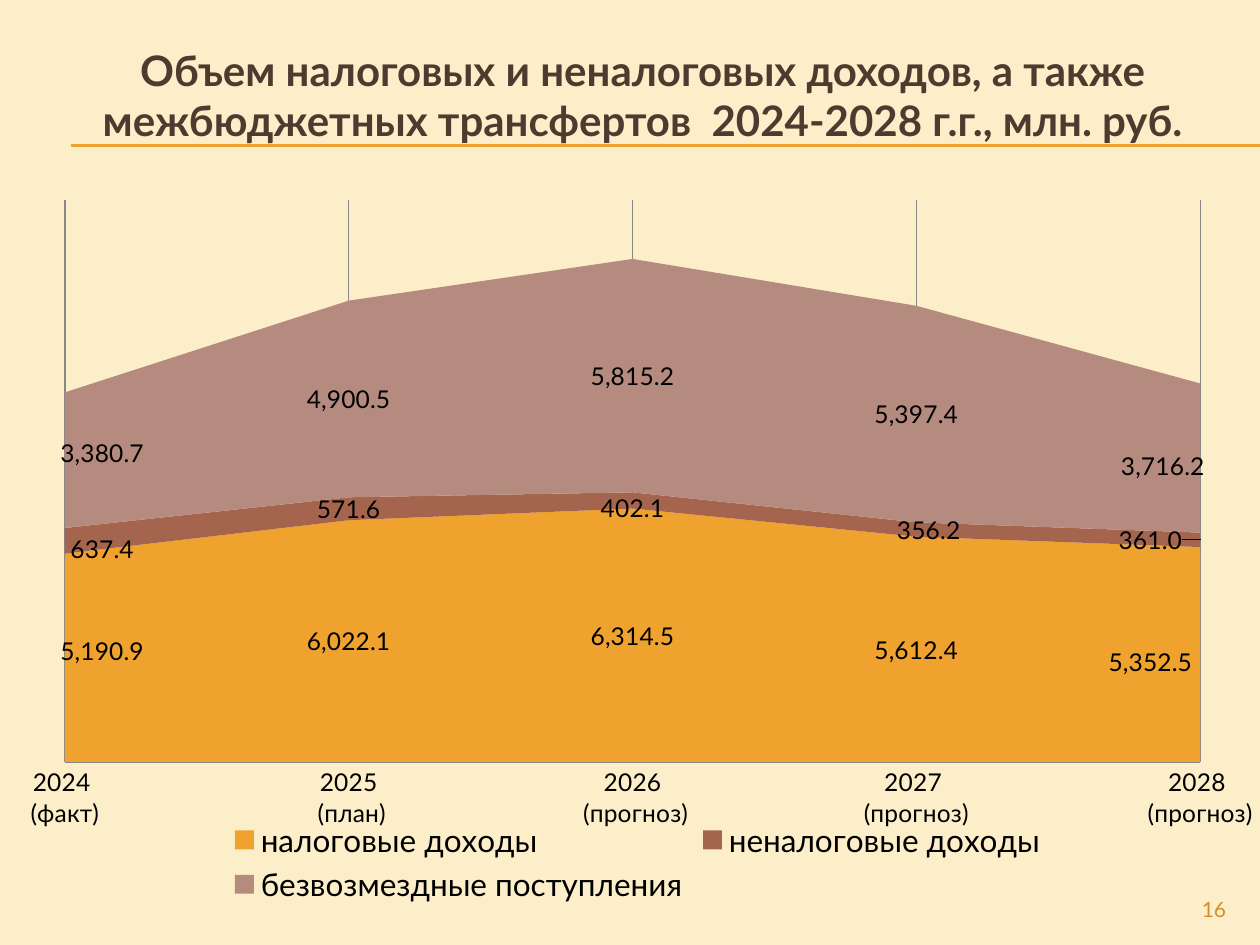
from lxml import etree
from pptx import Presentation
from pptx.chart.data import CategoryChartData
from pptx.dml.color import RGBColor
from pptx.enum.chart import XL_CHART_TYPE, XL_LEGEND_POSITION, XL_TICK_LABEL_POSITION, XL_TICK_MARK
from pptx.enum.shapes import MSO_CONNECTOR
from pptx.enum.text import MSO_ANCHOR, PP_ALIGN
from pptx.oxml.ns import qn
from pptx.util import Inches, Pt

FONT = "Lato"
CREAM = RGBColor(0xFB, 0xEE, 0xC9)
ORANGE = RGBColor(0xF0, 0xA2, 0x2E)
DARK_ORANGE = RGBColor(0xD4, 0x8F, 0x29)
RUST = RGBColor(0xA5, 0x64, 0x4E)
ROSE = RGBColor(0xB5, 0x8B, 0x80)
BROWN = RGBColor(0x4E, 0x3B, 0x30)
GREY = RGBColor(0x87, 0x87, 0x87)
BLACK = RGBColor(0, 0, 0)

NUMBER_FORMAT = "#,##0.0"
YEARS = ["2024 \n(факт)", "2025\n (план)", "2026\n (прогноз)",
         "2027 \n(прогноз)", "2028 \n(прогноз)"]
# name, values, colour, label shifts by point as fractions of the chart
INCOME = [
    ("налоговые доходы", [5190.9, 6022.1, 6314.5, 5612.4, 5352.5], ORANGE,
     {0: (0.03, -0.01), 4: (-0.04, 0.01)}),
    ("неналоговые доходы", [637.4, 571.6, 402.1, 356.2, 361], RUST,
     {0: (0.03, 0.01), 2: (0, 0.01), 3: (0.01, 0), 4: (-0.04, 0)}),
    ("безвозмездные поступления", [3380.7, 4900.5, 5815.2, 5397.4, 3716.2], ROSE,
     {0: (0.03, -0.01), 4: (-0.03, 0.01)}),
]


def style(font, size, color, bold=False):
    font.name, font.size, font.bold = FONT, Pt(size), bold
    font.color.rgb = color


def add_layout(parent, index, target=None, **values):
    """Insert a manual chart layout as the given child of parent."""
    layout = etree.Element(qn("c:layout"))
    manual = etree.SubElement(layout, qn("c:manualLayout"))
    if target:
        etree.SubElement(manual, qn("c:layoutTarget"), val=target)
        for mode in ("xMode", "yMode"):
            etree.SubElement(manual, qn(f"c:{mode}"), val="edge")
    for name, value in values.items():
        etree.SubElement(manual, qn(f"c:{name}"), val=str(value))
    parent.insert(index, layout)


def add_title(s, left, top, width, height):
    title = s.shapes.title
    title.left, title.top, title.width, title.height = left, top, width, height
    tf = title.text_frame
    tf.text = ("Объем налоговых и неналоговых доходов, а также "
               "межбюджетных трансфертов  2024-2028 г.г., млн. руб.")
    tf.word_wrap = True
    tf.vertical_anchor = MSO_ANCHOR.MIDDLE
    p = tf.paragraphs[0]
    p.alignment = PP_ALIGN.CENTER
    style(p.runs[0].font, 24, BROWN, bold=True)


def add_rules(s, left, right, tops):
    for top in tops:
        line = s.shapes.add_connector(MSO_CONNECTOR.STRAIGHT, left, top, right, top)
        line.line.color.rgb = ORANGE
        line.line.width = Pt(0.75)
        etree.SubElement(line._element.spPr, qn("a:effectLst"))


def format_series(series, color, shifts):
    series.format.fill.solid()
    series.format.fill.fore_color.rgb = color
    labels = series.data_labels
    labels.show_value = True
    labels.number_format = NUMBER_FORMAT
    labels.number_format_is_linked = False
    style(labels.font, 14, BLACK)
    for i, (x, y) in shifts.items():
        style(series.points[i].data_label.font, 14, BLACK)
        label = series._element.xpath(f".//c:dLbl[c:idx/@val='{i}']")[0]
        add_layout(label, 1, x=x, y=y)


def add_income_chart(s, left, top, width, height):
    data = CategoryChartData(number_format=NUMBER_FORMAT)
    data.categories = YEARS
    for name, values, _, _ in INCOME:
        data.add_series(name, values)
    chart = s.shapes.add_chart(XL_CHART_TYPE.AREA_STACKED, left, top, width, height, data).chart
    style(chart.font, 18, BLACK)
    chart.has_title = False
    chart.has_legend = True
    chart.legend.position = XL_LEGEND_POSITION.BOTTOM
    chart.legend.include_in_layout = False
    plot = chart.plots[0]
    plot.vary_by_categories = False
    for series, (_, _, color, shifts) in zip(plot.series, INCOME):
        format_series(series, color, shifts)

    years = chart.category_axis
    years.major_tick_mark = years.minor_tick_mark = XL_TICK_MARK.NONE
    years.tick_label_position = XL_TICK_LABEL_POSITION.NEXT_TO_AXIS
    style(years.tick_labels.font, 14, BLACK)
    years.has_major_gridlines = True
    for line in (years.format.line, years.major_gridlines.format.line):
        line.color.rgb = GREY
        line.width = Pt(0.75)

    amounts = chart.value_axis
    amounts.minimum_scale, amounts.maximum_scale = 0, 14000
    amounts.has_major_gridlines = False
    amounts.visible = False
    amounts.tick_labels.number_format = NUMBER_FORMAT
    amounts.tick_labels.number_format_is_linked = False
    for cross in amounts._element.findall(qn("c:crossBetween")):
        cross.set("val", "midCat")

    area = chart._chartSpace.chart.plotArea
    for old in area.findall(qn("c:layout")):
        area.remove(old)
    add_layout(area, 0, "inner", x=0.04, y=0.034, w=0.912, h=0.765)


def add_page_number(s, left, top, width, height):
    tf = s.shapes.add_textbox(left, top, width, height).text_frame
    tf.word_wrap = True
    tf.vertical_anchor = MSO_ANCHOR.MIDDLE
    p = tf.paragraphs[0]
    p.text = "16"
    p.alignment = PP_ALIGN.RIGHT
    style(p.runs[0].font, 12, DARK_ORANGE)


def main():
    prs = Presentation()
    prs.slide_width, prs.slide_height = Inches(10), Inches(7.5)
    s = prs.slides.add_slide(prs.slide_layouts[5])
    s.background.fill.solid()
    s.background.fill.fore_color.rgb = CREAM
    add_rules(s, Inches(0.56), Inches(10), [Inches(1.15), Inches(1.16)])
    add_title(s, Inches(0.35), Inches(0.29), Inches(9.5), Inches(0.92))
    add_page_number(s, Inches(9), Inches(7.08), Inches(0.83), Inches(0.27))
    add_income_chart(s, Inches(0.12), Inches(1.39), Inches(9.88), Inches(5.83))
    prs.save("out.pptx")


if __name__ == "__main__":
    main()
